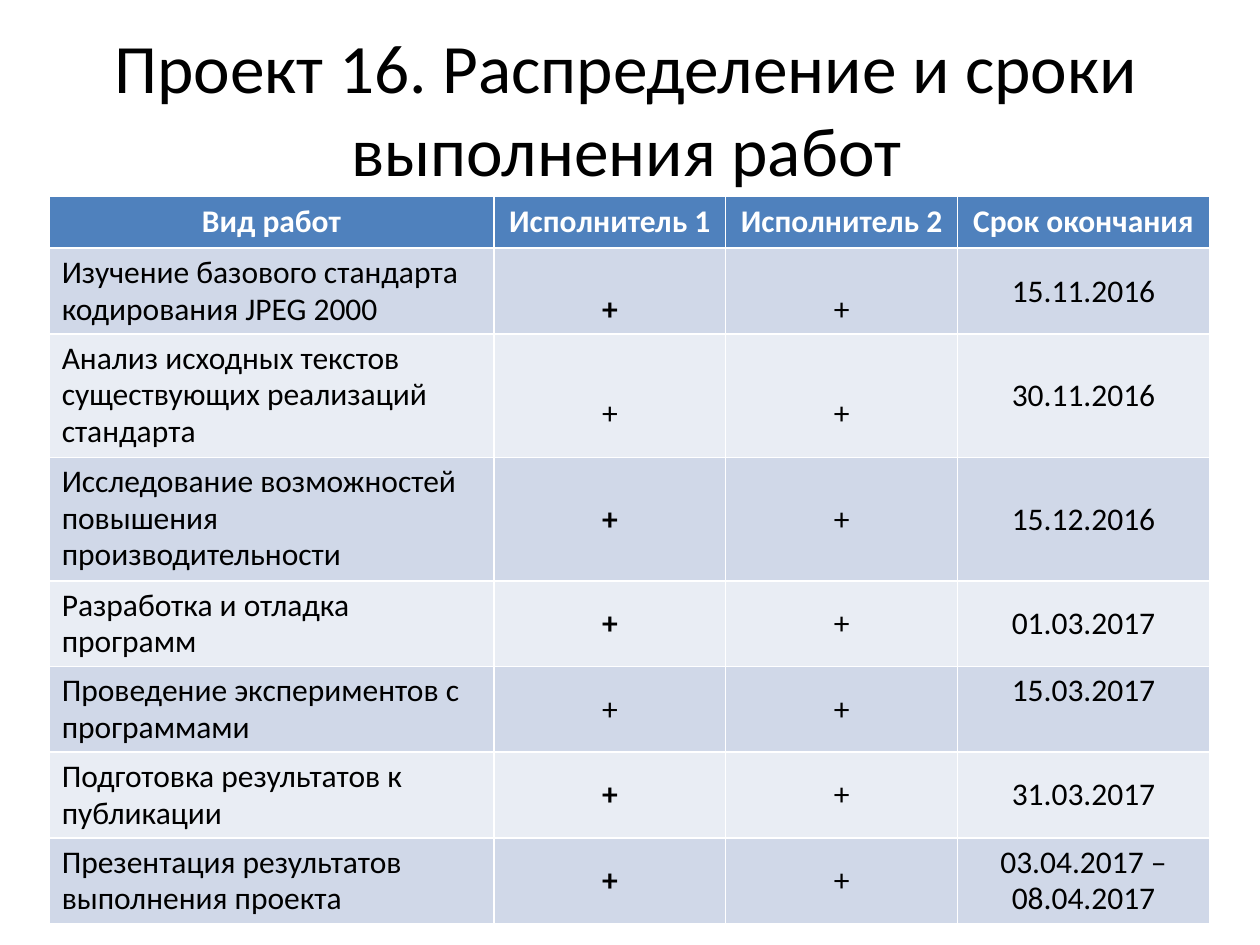
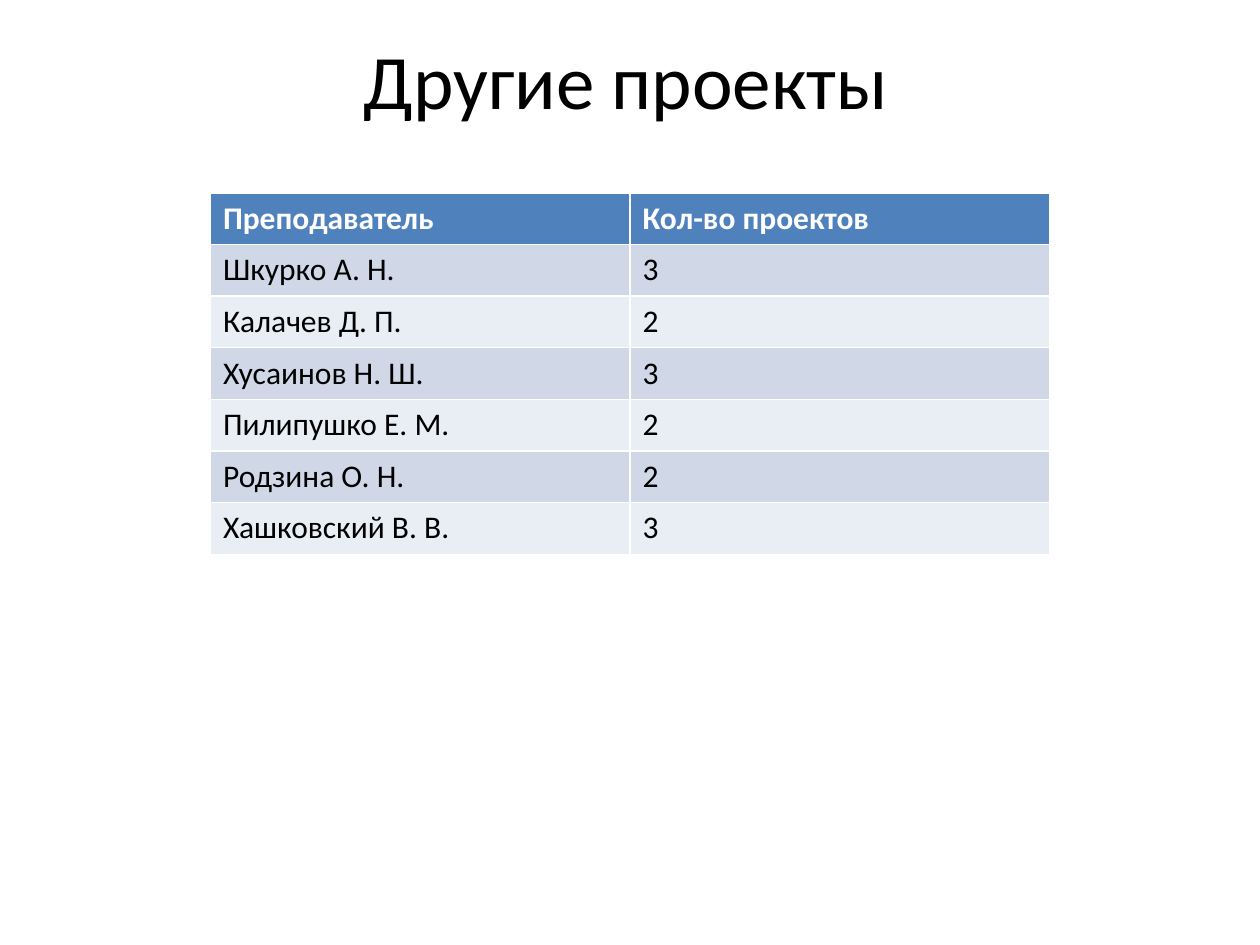
import pptx
import pptx.util
import pptx.dml.color
import pptx.enum.text

Inches, Pt = pptx.util.Inches, pptx.util.Pt
ALIGN = pptx.enum.text.PP_ALIGN
ANCHOR = pptx.enum.text.MSO_ANCHOR

# Content: a bold plus is marked "**+**"
LEAD = "**+**"
SCHEDULE_TITLE = "Проект 16. Распределение и сроки выполнения работ"
SCHEDULE = [
    ("Вид работ", "Исполнитель 1", "Исполнитель 2", "Срок окончания"),
    ("Изучение базового стандарта кодирования JPEG 2000", LEAD, "+", "15.11.2016"),
    ("Анализ исходных текстов существующих реализаций стандарта", "+", "+", "30.11.2016"),
    ("Исследование возможностей повышения производительности", LEAD, "+", "15.12.2016"),
    ("Разработка и отладка программ", LEAD, "+", "01.03.2017"),
    ("Проведение экспериментов с программами", "+", "+", "15.03.2017"),
    ("Подготовка результатов к публикации", LEAD, "+", "31.03.2017"),
    ("Презентация результатов выполнения проекта", LEAD, "+", "03.04.2017 – 08.04.2017"),
]
OTHERS_TITLE = "Другие проекты"
OTHERS = [
    ("Преподаватель", "Кол-во проектов"),
    ("Шкурко А. Н.", "3"),
    ("Калачев Д. П.", "2"),
    ("Хусаинов Н. Ш.", "3"),
    ("Пилипушко Е. М.", "2"),
    ("Родзина О. Н.", "2"),
    ("Хашковский В. В.", "3"),
]

# Shared style
COLORS = {"header": "4F81BD", "odd": "D0D8E8", "even": "E9EDF4",
          "header_text": "FFFFFF", "text": "000000"}
FONT = "Calibri"
CELL_SIZE = 18
ROW_HEIGHT = 0.41
LINE = 0.29  # one line of cell text
LOWERED_ROWS = (1, 2)  # plus signs sit one half-line below the middle
RAISED_DATE_ROW = 5


def rgb(name):
    return pptx.dml.color.RGBColor.from_string(COLORS[name])


def style_font(font, size, color, bold=False):
    font.name, font.size, font.bold = FONT, Pt(size), bold
    font.color.rgb = rgb(color)


def add_titled_slide(prs, title, top, size):
    slide = prs.slides.add_slide(prs.slide_layouts[5])
    heading = slide.shapes.title
    heading.left, heading.top = Inches(0.47), Inches(top)
    heading.width, heading.height = Inches(9), Inches(1.25)
    frame = heading.text_frame
    frame.text = title
    frame.auto_size = pptx.enum.text.MSO_AUTO_SIZE.NONE
    frame.vertical_anchor = ANCHOR.MIDDLE
    frame.paragraphs[0].alignment = ALIGN.CENTER
    style_font(frame.paragraphs[0].runs[0].font, size, "text")
    return slide


def add_banded_table(slide, rows, left, top, widths, heights):
    table = slide.shapes.add_table(
        len(rows), len(widths), Inches(left), Inches(top),
        Inches(sum(widths)), Inches(sum(heights))).table
    for column, width in zip(table.columns, widths):
        column.width = Inches(width)
    for r, (values, height) in enumerate(zip(rows, heights)):
        table.rows[r].height = Inches(height)
        band = "header" if r == 0 else ("even", "odd")[r % 2]
        for c, value in enumerate(values):
            cell = table.cell(r, c)
            cell.fill.solid()
            cell.fill.fore_color.rgb = rgb(band)
            cell.text_frame.text = value.strip("*")
            style_font(cell.text_frame.paragraphs[0].runs[0].font, CELL_SIZE,
                       "text" if r else "header_text", r == 0 or value == LEAD)
    return table


def arrange_schedule(table):
    for r in range(len(SCHEDULE)):
        for c in range(len(SCHEDULE[0])):
            cell = table.cell(r, c)
            paragraph = cell.text_frame.paragraphs[0]
            if r:
                paragraph.line_spacing = 0.95
            if r == 0 or c:
                paragraph.alignment = ALIGN.CENTER
            if r and c:
                cell.vertical_anchor = ANCHOR.MIDDLE
            if r in LOWERED_ROWS and c in (1, 2):
                cell.margin_top = Inches(0.05 + LINE)
    table.cell(RAISED_DATE_ROW, 3).vertical_anchor = ANCHOR.TOP


def main():
    prs = pptx.Presentation()
    prs.slide_width, prs.slide_height = Inches(10), Inches(7.5)

    # Work schedule
    slide = add_titled_slide(prs, SCHEDULE_TITLE, 0.23, 39.6)
    heights = [ROW_HEIGHT, 0.68, 0.98, 0.98] + [0.68] * 4
    arrange_schedule(add_banded_table(
        slide, SCHEDULE, 0.39, 1.56, [3.53, 1.84, 1.84, 2], heights))

    # Projects of other teachers
    slide = add_titled_slide(prs, OTHERS_TITLE, 0, 44)
    add_banded_table(slide, OTHERS, 1.67, 1.53, [3.33] * 2,
                     [ROW_HEIGHT] * len(OTHERS))

    prs.save("out.pptx")


if __name__ == "__main__":
    main()
